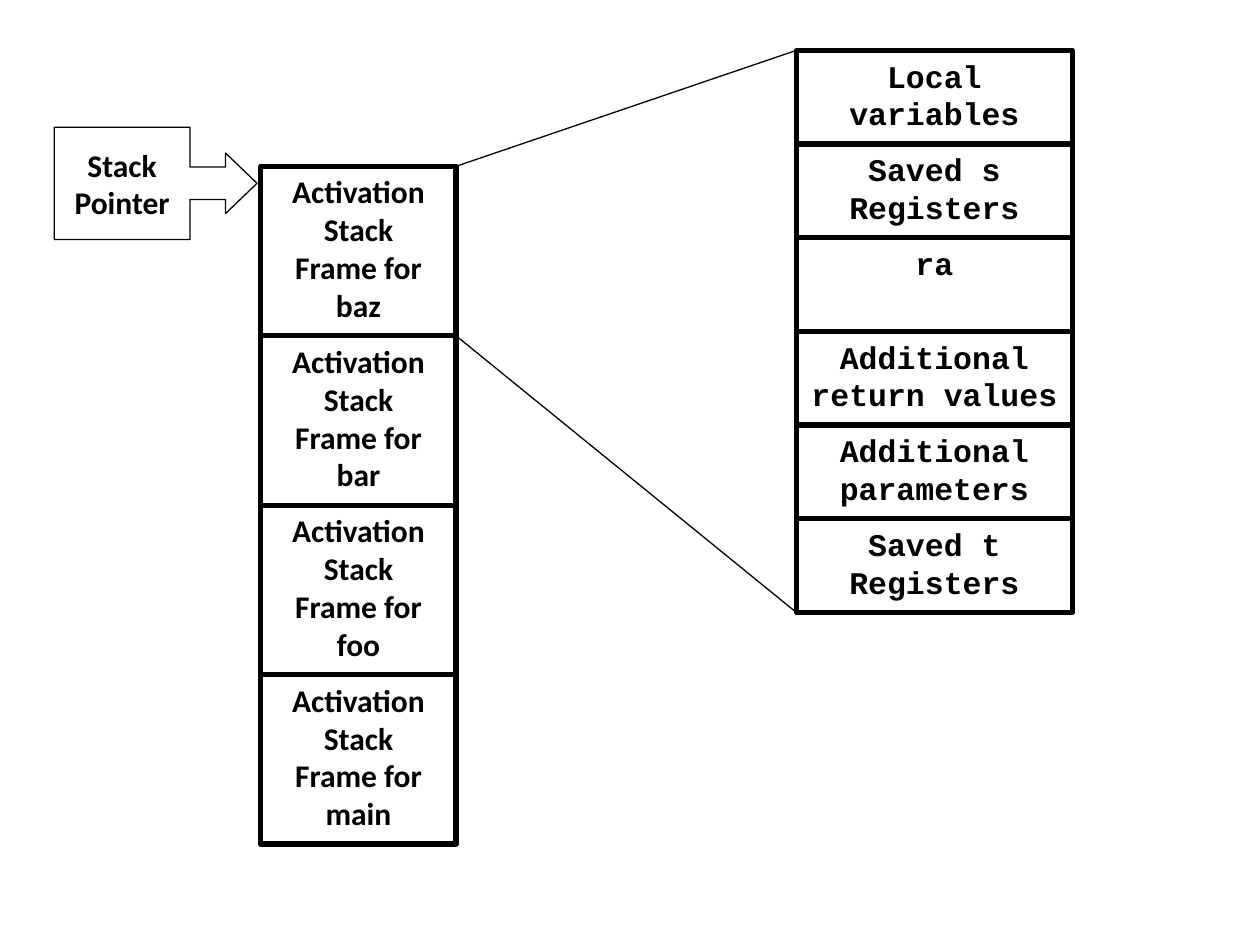
from dataclasses import dataclass

from pptx import Presentation
from pptx.dml.color import RGBColor
from pptx.enum.shapes import MSO_CONNECTOR as CONN, MSO_SHAPE as SHAPE
from pptx.enum.text import MSO_ANCHOR as ANCHOR, MSO_AUTO_SIZE as AUTO, PP_ALIGN as ALIGN
from pptx.oxml.ns import qn
from pptx.util import Pt
from lxml.etree import SubElement

PX = 9144  # 100 px to the inch


@dataclass(frozen=True)
class Theme:
    ink: RGBColor = RGBColor(0, 0, 0)
    sans: str = "Calibri"
    mono: str = "Courier New"
    text: Pt = Pt(18)
    thin: Pt = Pt(0.75)
    thick: Pt = Pt(3)


T = Theme()


def emu(*px):
    return [round(v * PX) for v in px]


def add_box(kind, box, lines, font, weight, anchor=ANCHOR.TOP):
    """Add an unfilled outlined shape with one bold centred paragraph per line."""
    sp = slide.shapes.add_shape(kind, *emu(*box))
    sp.shadow.inherit = False
    sp.fill.background()
    sp.line.color.rgb = T.ink
    sp.line.width = weight
    tf = sp.text_frame
    tf.word_wrap = True
    tf.vertical_anchor = anchor
    tf.text = "\n".join(lines)
    for p in tf.paragraphs:
        p.alignment = ALIGN.CENTER
        p.font.name = font
        p.font.size = T.text
        p.font.bold = True
        p.font.color.rgb = T.ink
    return sp


prs = Presentation()
prs.slide_width, prs.slide_height = emu(1000, 750)
slide = prs.slides.add_slide(prs.slide_layouts[6])

# Stack pointer
pointer = add_box(SHAPE.RIGHT_ARROW_CALLOUT, (43, 101, 161, 89),
                  ["Stack", "Pointer"], T.sans, T.thin, ANCHOR.MIDDLE)
pointer.text_frame.word_wrap = False
for i, value in enumerate((0.29, 0.27, 0.28, 0.67)):
    pointer.adjustments[i] = value

# Stack of activation frames
functions = ["baz", "bar", "foo", "main"]
stack_x, stack_y, stack_w, stack_h = 207, 132, 155, 538
frame_h = stack_h / len(functions)
for i, name in enumerate(functions):
    frame = add_box(SHAPE.RECTANGLE, (stack_x, stack_y + i * frame_h, stack_w, frame_h),
                    ["Activation", "Stack", "Frame for", name], T.sans, T.thick)
    frame.text_frame.auto_size = AUTO.SHAPE_TO_FIT_TEXT

# Contents of one frame
fields = ["Local variables", "Saved s Registers", "ra", "Additional return values",
          "Additional parameters", "Saved t Registers"]
detail_x, detail_y, detail_w, detail_h = 632, 40, 219, 446
field_h = detail_h / len(fields)
for i, field in enumerate(fields):
    add_box(SHAPE.RECTANGLE, (detail_x, detail_y + i * field_h, detail_w, field_h),
            [field], T.mono, T.thick)

# Lines from the top frame to its contents
for y1, y2 in ((stack_y, detail_y), (stack_y + frame_h, detail_y + detail_h)):
    line = slide.shapes.add_connector(CONN.STRAIGHT, *emu(stack_x + stack_w, y1, detail_x, y2))
    line.line.color.rgb = T.ink
    line.line.width = T.thin
    SubElement(line._element.spPr, qn("a:effectLst"))

prs.save("out.pptx")
